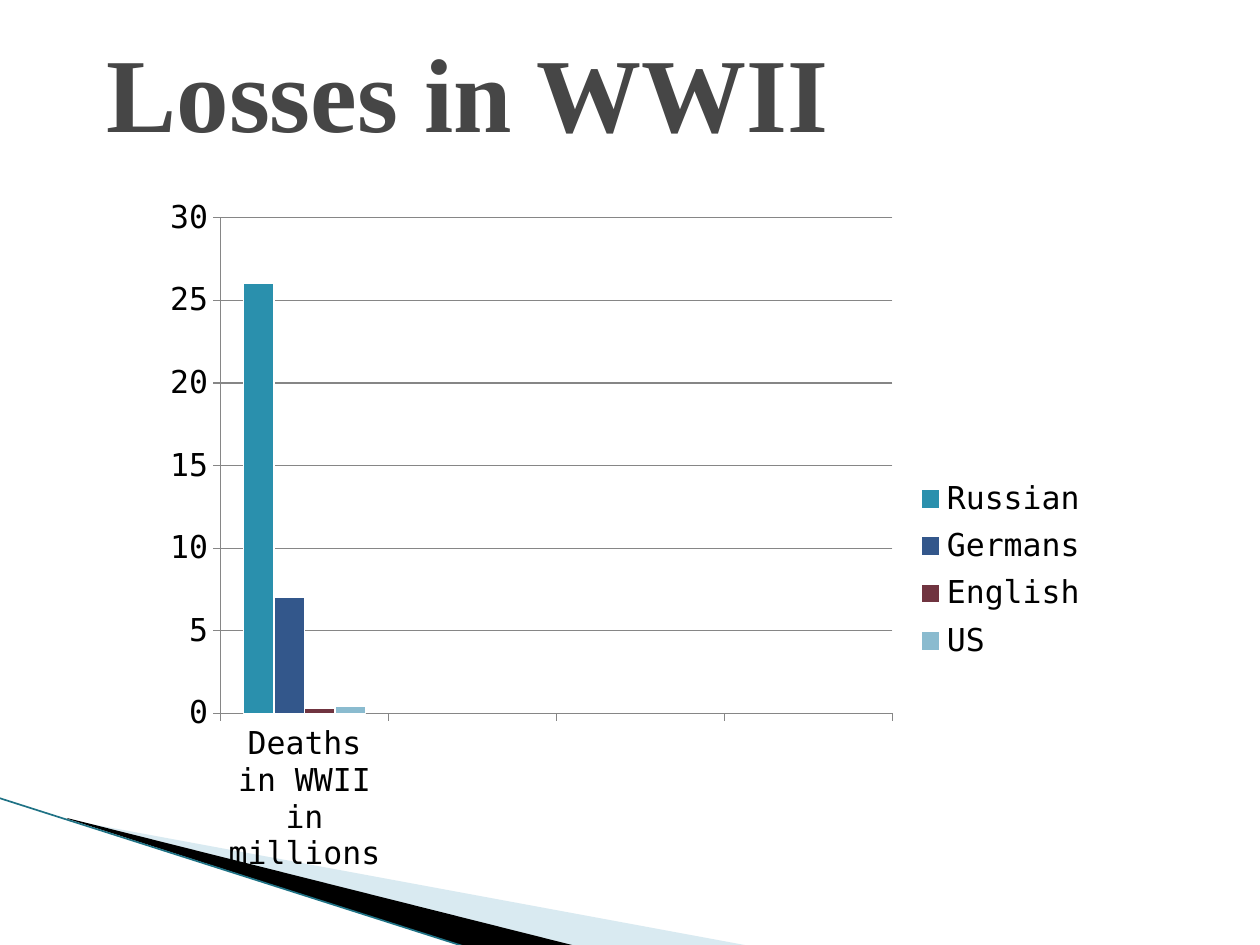
from lxml.etree import SubElement
from pptx import Presentation
from pptx.chart.data import CategoryChartData
from pptx.dml.color import RGBColor
from pptx.enum.chart import XL_CHART_TYPE as ChartType, XL_LEGEND_POSITION as LegendPosition
from pptx.enum.chart import XL_TICK_LABEL_POSITION as LabelPosition, XL_TICK_MARK as TickMark
from pptx.enum.shapes import MSO_CONNECTOR as Connector
from pptx.enum.text import MSO_ANCHOR as Anchor, PP_ALIGN as Align
from pptx.oxml import parse_xml
from pptx.oxml.ns import nsdecls, qn
from pptx.util import Emu, Inches, Pt

PX = 914400 / 126
COLORS = {"title": "464646", "text": "000000", "pale": "A0CBDC", "black": "000000",
          "edge": "1F7285", "grid": "868686", "white": "FFFFFF"}
TITLE = "Losses in WWII"
TITLE_BOX = (94, -9, 1071, 198)
CHART_BOX = (63, 168, 1302, 829)
PLOT_AREA = (0.121, 0.06, 0.516, 0.598)
LEGEND_AREA = (0.65, 0.365, 0.14, 0.24)
CATEGORIES = ["Deaths in WWII in millions", "", "", ""]
SERIES = [("Russian", 26, "2A90AD"), ("Germans", 7, "33578B"),
          ("English", 0.3, "703440"), ("US", 0.4, "8ABBCF")]
WEDGES = [("pale", 40, [(69, 820), (750, 946), (575, 946), (69, 819)]),
          ("black", 100, [(67, 818), (576, 946), (469, 948), (68, 819)])]
EDGE = (-1, 798, 469, 948)


def px(*values):
    return [Emu(round(value * PX)) for value in values]


def color(name):
    return RGBColor.from_string(COLORS.get(name, name))


def write(box, text, *, font, size, ink, bold=False, anchor=Anchor.MIDDLE, align=Align.LEFT):
    frame = box.text_frame
    frame.word_wrap = True
    frame.vertical_anchor = anchor
    para = frame.paragraphs[0]
    para.alignment = align
    span = para.add_run()
    span.text = text
    span.font.name, span.font.size, span.font.bold = font, Pt(size), bold
    span.font.color.rgb = color(ink)


def add_wedge(page, fill, opacity, points):
    builder = page.shapes.build_freeform(*points[0], scale=PX)
    builder.add_line_segments(points[1:], close=True)
    wedge = builder.convert_to_shape()
    wedge.shadow.inherit = False
    wedge.fill.solid()
    wedge.fill.fore_color.rgb = color(fill)
    wedge.line.fill.background()
    if opacity < 100:
        tint = wedge.fill._xPr.find(".//" + qn("a:srgbClr"))
        SubElement(tint, qn("a:alpha"), val=str(opacity * 1000))


def add_edge(page):
    edge = page.shapes.add_connector(Connector.STRAIGHT, *px(*EDGE))
    edge.line.color.rgb = color("edge")
    edge.line.width = Pt(0.95)
    SubElement(edge._element.spPr, qn("a:effectLst"))


def place(parent, index, area, inner=False):
    for old in parent.findall(qn("c:layout")):
        parent.remove(old)
    target = '<c:layoutTarget val="inner"/>' if inner else ""
    modes = '<c:xMode val="edge"/><c:yMode val="edge"/>'
    sizes = "".join(f'<c:{tag} val="{part}"/>' for tag, part in zip("xywh", area))
    parent.insert(index, parse_xml(
        f'<c:layout {nsdecls("c")}><c:manualLayout>{target}{modes}{sizes}'
        '</c:manualLayout></c:layout>'))


def add_losses_chart(page):
    data = CategoryChartData()
    data.categories = CATEGORIES
    for name, deaths, _ in SERIES:
        data.add_series(name, [deaths, None, None, None])
    chart = page.shapes.add_chart(ChartType.COLUMN_CLUSTERED, *px(*CHART_BOX), data).chart
    chart.has_title = False
    chart.font.name, chart.font.size = "DejaVu Sans Mono", Pt(18)
    chart.font.color.rgb = color("text")

    plot = chart.plots[0]
    plot.gap_width, plot.overlap, plot.vary_by_categories = 150, 0, False
    for series, (_, _, fill) in zip(plot.series, SERIES):
        series.format.fill.solid()
        series.format.fill.fore_color.rgb = color(fill)
        series.format.line.color.rgb = color("white")
        series.format.line.width = Pt(0.75)

    deaths_axis = chart.value_axis
    deaths_axis.minimum_scale, deaths_axis.maximum_scale, deaths_axis.major_unit = 0, 30, 5
    deaths_axis.has_major_gridlines = True
    chart.category_axis.tick_label_position = LabelPosition.LOW
    for axis in (chart.category_axis, deaths_axis):
        axis.major_tick_mark = TickMark.OUTSIDE
        axis.minor_tick_mark = TickMark.NONE
    for part in (chart.category_axis, deaths_axis, deaths_axis.major_gridlines):
        part.format.line.color.rgb = color("grid")
        part.format.line.width = Pt(0.75)

    chart.has_legend = True
    chart.legend.position = LegendPosition.RIGHT
    chart.legend.include_in_layout = False
    place(chart._chartSpace.chart.plotArea, 0, PLOT_AREA, inner=True)
    place(chart.legend._element, 1, LEGEND_AREA)


def main():
    deck = Presentation()
    deck.slide_width, deck.slide_height = Inches(10), Inches(7.5)
    page = deck.slides.add_slide(deck.slide_layouts[5])
    for wedge in WEDGES:
        add_wedge(page, *wedge)
    add_edge(page)
    title = page.shapes.title
    title.left, title.top, title.width, title.height = px(*TITLE_BOX)
    write(title, TITLE, font="Times New Roman", size=60, ink="title", bold=True)
    add_losses_chart(page)
    deck.save("out.pptx")


if __name__ == "__main__":
    main()
